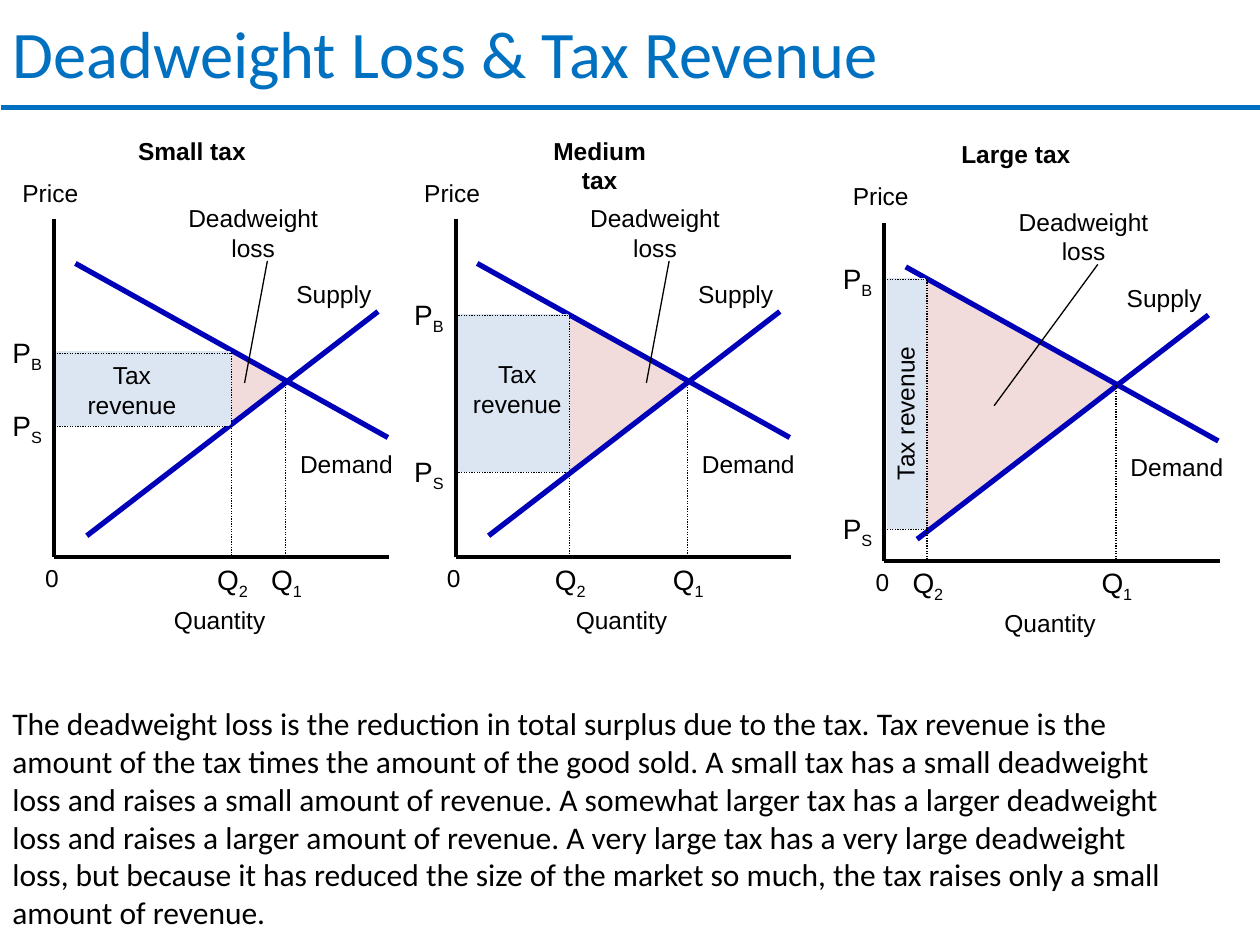
from dataclasses import dataclass

from lxml import etree
from pptx import Presentation
from pptx.dml.color import RGBColor
from pptx.enum.dml import MSO_LINE
from pptx.enum.shapes import MSO_CONNECTOR, MSO_SHAPE
from pptx.enum.text import MSO_ANCHOR, MSO_AUTO_SIZE, PP_ALIGN
from pptx.oxml.ns import qn
from pptx.util import Cm, Pt

LEFT, CENTER, RIGHT = PP_ALIGN.LEFT, PP_ALIGN.CENTER, PP_ALIGN.RIGHT
TOP, MIDDLE = MSO_ANCHOR.TOP, MSO_ANCHOR.MIDDLE
DOTTED = MSO_LINE.ROUND_DOT
RECTANGLE, TRIANGLE = MSO_SHAPE.RECTANGLE, MSO_SHAPE.ISOSCELES_TRIANGLE

SUMMARY = (
    "The deadweight loss is the reduction in total surplus due to the tax. "
    "Tax revenue is the amount of the tax times the amount of the good sold. "
    "A small tax has a small deadweight loss and raises a small amount of revenue. "
    "A somewhat larger tax has a larger deadweight loss and raises a larger amount of revenue. "
    "A very large tax has a very large deadweight loss, but because it has reduced the size "
    "of the market so much, the tax raises only a small amount of revenue."
)


@dataclass(frozen=True)
class Theme:
    heading: str = "0070C0"
    ink: str = "000000"
    curve: str = "0000B8"
    loss: str = "F2DCDB"
    revenue: str = "DCE6F2"
    text_font: str = "Calibri"
    chart_font: str = "Arial"
    title_size: int = 38
    body_size: int = 18
    symbol_size: int = 16
    label_size: int = 14
    curve_width: float = 3
    axis_width: float = 2.25
    thin_width: float = 0.75
    outline_width: float = 2


@dataclass(frozen=True)
class Market:
    """One diagram; lengths in cm, measured from its axis corner."""
    title: str
    title_center: float
    corner: tuple
    taxed_quantity: float
    buyer_price: float
    seller_price: float
    apex: float
    callout_start: tuple
    revenue_text: str
    revenue_center: tuple
    revenue_size: tuple = (2.49, 1.45)
    revenue_rotation: int = 0


MARKETS = (
    Market("Small tax", 2.78, (1.09, 11.23), 3.58, -4.11, -2.63, 0.394,
           (3.84, -3.51), "Tax\nrevenue", (1.57, -3.37)),
    Market("Medium tax", 2.90, (9.19, 11.23), 2.29, -4.87, -1.70, 0.426,
           (3.84, -3.51), "Tax\nrevenue", (1.24, -3.39)),
    Market("Large tax", 2.65, (17.83, 11.30), 0.86, -5.66, -0.62, 0.426,
           (2.21, -3.12), "Tax revenue", (0.42, -2.97), (3.73, 0.86), 270),
)


def write(frame, text, *, font, size, color, bold=False, align=LEFT):
    """Line breaks start paragraphs; what follows an underscore is a subscript."""
    for number, line in enumerate(text.split("\n")):
        para = frame.add_paragraph() if number else frame.paragraphs[0]
        para.alignment = align
        for level, part in enumerate(line.split("_")):
            span = para.add_run()
            span.text = part
            span.font.name = font
            span.font.size = Pt(size)
            span.font.bold = bold
            span.font.color.rgb = RGBColor.from_string(color)
            if level:
                span._r.get_or_add_rPr().set("baseline", "-25000")


class Painter:
    def __init__(self, page, theme):
        self.page = page
        self.theme = theme
        self.origin = (0, 0)

    def place(self, x, y):
        return Cm(self.origin[0] + x), Cm(self.origin[1] + y)

    def line(self, start, end, color, width, dash=None):
        line = self.page.shapes.add_connector(
            MSO_CONNECTOR.STRAIGHT, *self.place(*start), *self.place(*end))
        line.line.color.rgb = RGBColor.from_string(color)
        line.line.width = Pt(width)
        if dash:
            line.line.dash_style = dash
        etree.SubElement(line._element.spPr, qn("a:effectLst"))

    def area(self, kind, left, top, width, height, color):
        shape = self.page.shapes.add_shape(
            kind, *self.place(left, top), Cm(width), Cm(height))
        shape.shadow.inherit = False
        shape.fill.solid()
        shape.fill.fore_color.rgb = RGBColor.from_string(color)
        shape.line.color.rgb = RGBColor.from_string(color)
        shape.line.width = Pt(self.theme.outline_width)
        return shape

    def text(self, text, left, top, width, height, *, wrap=False, anchor=TOP,
             fit=MSO_AUTO_SIZE.SHAPE_TO_FIT_TEXT, **style):
        box = self.page.shapes.add_textbox(
            *self.place(left, top), Cm(width), Cm(height))
        frame = box.text_frame
        frame.word_wrap = wrap
        frame.auto_size = fit
        frame.vertical_anchor = anchor
        write(frame, text, **style)
        return box

    def label(self, text, left, top, width, height=0.86, align=CENTER, **options):
        style = dict(font=self.theme.chart_font, size=self.theme.label_size,
                     color=self.theme.ink, align=align)
        return self.text(text, left, top, width, height, **{**style, **options})

    def symbol(self, text, left, top, align=CENTER):
        self.label(text, left, top, 1.17, 0.94, align, size=self.theme.symbol_size)

    def guide(self, start, end):
        self.line(start, end, self.theme.ink, self.theme.thin_width, DOTTED)

    def market(self, market):
        theme = self.theme
        self.origin = market.corner
        free_quantity = 4.67
        quantity = market.taxed_quantity
        buyer, seller = market.buyer_price, market.seller_price

        for end in ((0, -6.81), (6.76, 0)):
            self.line((0, 0), end, theme.ink, theme.axis_width)
        self.label("Price", -0.91, -7.77, 1.65, align=RIGHT)
        self.label("Quantity", 2.16, 0.84, 2.36)
        self.label("0", -0.43, 0, 0.79, align=LEFT)
        self.label(market.title, market.title_center - 1.6, -8.62, 3.2, bold=True)

        # The triangle is turned to point right, so its width runs down the page.
        width = seller - buyer - 0.08
        height = free_quantity - quantity - 0.03
        loss = self.area(TRIANGLE, quantity + (height - width) / 2,
                         (buyer + seller - height) / 2, width, height, theme.loss)
        loss.rotation = 90
        loss.adjustments[0] = market.apex

        self.line((0.43, -5.92), (6.73, -2.41), theme.curve, theme.curve_width)
        self.label("Demand", 4.70, -2.31, 2.39)
        self.line((0.66, -0.43), (6.53, -4.95), theme.curve, theme.curve_width)
        self.label("Supply ", 4.62, -5.72, 2.18)
        self.label("Deadweight\nloss", 2.34, -7.26, 3.35, 1.45, wrap=True)
        self.line(market.callout_start, (4.30, -5.97), theme.ink, theme.thin_width)

        self.area(RECTANGLE, 0.08, buyer, quantity - 0.13,
                  seller - buyer - 0.05, theme.revenue)
        for name, price in (("P_B", buyer), ("P_S", seller)):
            self.guide((0, price), (quantity, price))
            self.symbol(name, -1.09, price - 0.49, LEFT)
        for name, x, top in (("Q_1", free_quantity, -3.53), ("Q_2", quantity, buyer)):
            self.guide((x, top), (x, 0))
            self.symbol(name, x - 0.57, -0.02)

        (x, y), (width, height) = market.revenue_center, market.revenue_size
        box = self.label(market.revenue_text, x - width / 2, y - height / 2,
                         width, height, wrap=True)
        box.rotation = market.revenue_rotation
        self.origin = (0, 0)


def main():
    deck = Presentation()
    deck.slide_width, deck.slide_height = Cm(25.4), Cm(19.05)
    theme = Theme()
    painter = Painter(deck.slides.add_slide(deck.slide_layouts[6]), theme)
    painter.line((0.03, 2.16), (25.4, 2.16), theme.heading, theme.curve_width)
    painter.text("Deadweight Loss & Tax Revenue", 0, 0, 25.4, 2.11, wrap=True,
                 anchor=MIDDLE, fit=MSO_AUTO_SIZE.NONE, font=theme.text_font,
                 size=theme.title_size, color=theme.heading)
    for market in MARKETS:
        painter.market(market)
    painter.text(SUMMARY, 0, 14.07, 24.08, 4.88, wrap=True, font=theme.text_font,
                 size=theme.body_size, color=theme.ink)
    deck.save("out.pptx")


if __name__ == "__main__":
    main()
